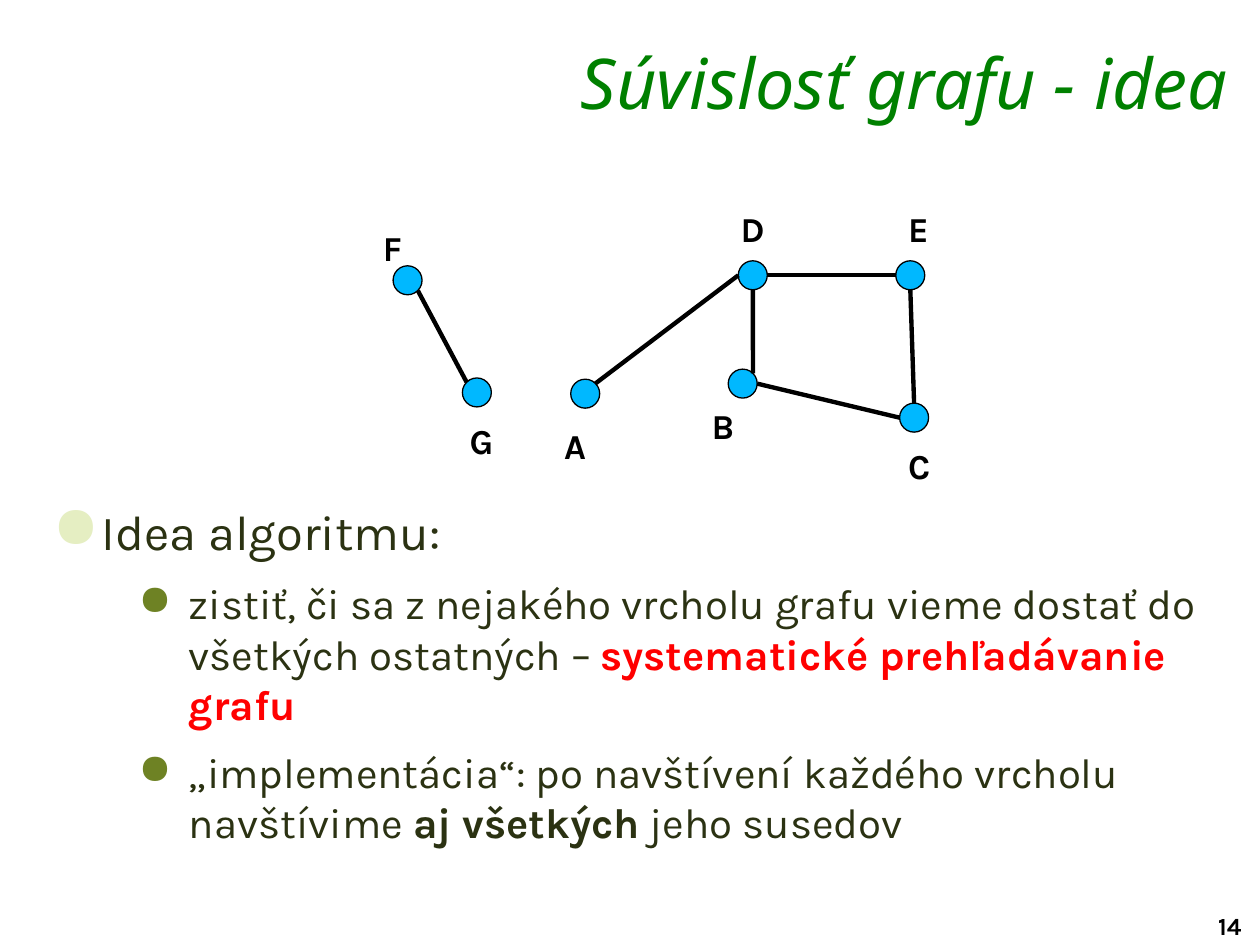
from math import cos, radians, sin
from lxml.etree import SubElement
from pptx import Presentation
from pptx.dml.color import RGBColor
from pptx.enum.shapes import MSO_CONNECTOR as Link, MSO_SHAPE as Kind
from pptx.enum.text import MSO_ANCHOR as Anchor, MSO_AUTO_SIZE as Fit, PP_ALIGN as Align
from pptx.oxml.ns import qn
from pptx.util import Inches, Pt

BLACK, GREEN, OLIVE, RED, BLUE = "000000", "008000", "2B3212", "FF0000", "00B8FF"
SIZE = 0.23  # node diameter


def color(code):
    return RGBColor.from_string(code)


class Painter:
    face = "Karla"

    def __init__(self, slide):
        self.slide = slide

    def style(self, para, size, code, bold=None, face=None):
        font = para.font
        font.name, font.size, font.bold = face or self.face, Pt(size), bold
        font.color.rgb = color(code)

    def title(self, text, x, y, w, h):
        box = self.slide.shapes.title
        box.left, box.top, box.width, box.height = map(Inches, (x, y, w, h))
        frame = box.text_frame
        frame.text = text
        frame.auto_size, frame.vertical_anchor = Fit.NONE, Anchor.TOP
        frame.margin_top = 0
        para = frame.paragraphs[0]
        para.alignment = Align.RIGHT
        self.style(para, 40, GREEN, face="Noto Sans")
        para.font.italic = True

    def box(self, x, y, w, h, wrap=True):
        frame = self.slide.shapes.add_textbox(*map(Inches, (x, y, w, h))).text_frame
        frame.word_wrap = wrap
        return frame

    def label(self, text, x, y, w, h, size, wrap=False):
        para = self.box(x, y, w, h, wrap).paragraphs[0]
        para.text = text
        self.style(para, size, BLACK, bold=True)

    def bullet(self, para, left, hang, code, scale):
        props = para._p.get_or_add_pPr()
        props.set("marL", str(Inches(left)))
        props.set("indent", str(-Inches(hang)))
        tint = SubElement(props, qn("a:buClr"))
        SubElement(tint, qn("a:srgbClr")).set("val", code)
        SubElement(props, qn("a:buSzPct")).set("val", str(scale * 1000))
        SubElement(props, qn("a:buChar")).set("char", "●")

    def items(self, rows, x, y, w, h):
        frame = self.box(x, y, w, h)
        for i, (level, runs) in enumerate(rows):
            para = frame.add_paragraph() if i else frame.paragraphs[0]
            para.level = level
            if level:
                self.bullet(para, 1.08, 0.4, "6E8224", 100)
            else:
                self.bullet(para, 0.39, 0.39, "E5EEC2", 120)
            if i:
                para.space_before = Pt(5)
            para.space_after = Pt(5)
            self.style(para, 24 if level else 28, OLIVE)
            for text, bold, code in runs:
                run = para.add_run()
                run.text = text
                run.font.bold = bold
                if code:
                    run.font.color.rgb = color(code)

    def node(self, x, y):
        dot = self.slide.shapes.add_shape(Kind.OVAL, *map(Inches, (x, y, SIZE, SIZE)))
        dot.shadow.inherit = False
        dot.fill.solid()
        dot.fill.fore_color.rgb = color(BLUE)
        dot.line.color.rgb = color(BLACK)
        dot.line.width = Pt(0.75)

    def edge(self, start, end):
        line = self.slide.shapes.add_connector(Link.STRAIGHT, *map(Inches, start + end))
        line.line.color.rgb = color(BLACK)
        line.line.width = Pt(2.5)
        SubElement(line._element.spPr, qn("a:effectLst"))


# Node corner, then label corner
NODES = {
    "B": ((5.78, 2.93), (5.55, 3.16)),
    "A": ((4.53, 3.01), (4.38, 3.32)),
    "D": ((5.86, 2.07), (5.78, 1.6)),
    "E": ((7.11, 2.07), (7.11, 1.6)),
    "C": ((7.14, 3.2), (7.11, 3.48)),
    "F": ((3.12, 2.11), (2.94, 1.75)),
    "G": ((3.67, 3), (3.63, 3.28)),
}
# Node and the angle at which the edge leaves it, for both ends
EDGES = [
    ("A", 45, "D", 180), ("D", 0, "E", 180), ("B", 45, "D", 270),
    ("B", 0, "C", 180), ("C", 90, "E", 270), ("G", 135, "F", 315),
]
ITEMS = [
    (0, [("Idea algoritmu:", False, None)]),
    (1, [("zistiť, či sa z nejakého vrcholu grafu vieme dostať do všetkých ostatných – ",
          False, None),
         ("systematické prehľadávanie grafu", True, RED)]),
    (1, [("„implementácia“: po navštívení každého vrcholu navštívime ", False, None),
         ("aj všetkých", True, None),
         (" jeho susedov", False, None)]),
]


def rim(name, angle):
    (x, y), _ = NODES[name]
    r, turn = SIZE / 2, radians(angle)
    return x + r + r * cos(turn), y + r - r * sin(turn)


def main():
    deck = Presentation()
    deck.slide_width, deck.slide_height = Inches(10), Inches(7.5)
    art = Painter(deck.slides.add_slide(deck.slide_layouts[5]))

    # Page number, title and text
    art.label("14", 9.57, 7.18, 0.51, 0.33, 14, wrap=True)
    art.title("Súvislosť grafu - idea", 2.29, 0.31, 7.55, 0.58)
    art.items(ITEMS, 0.32, 3.93, 9.38, 3.27)

    # Graph
    for name, (spot, tag) in NODES.items():
        art.node(*spot)
        art.label(name, *tag, 0.37, 0.44, 20)
    for a, out, b, into in EDGES:
        art.edge(rim(a, out), rim(b, into))

    deck.save("out.pptx")


if __name__ == "__main__":
    main()
